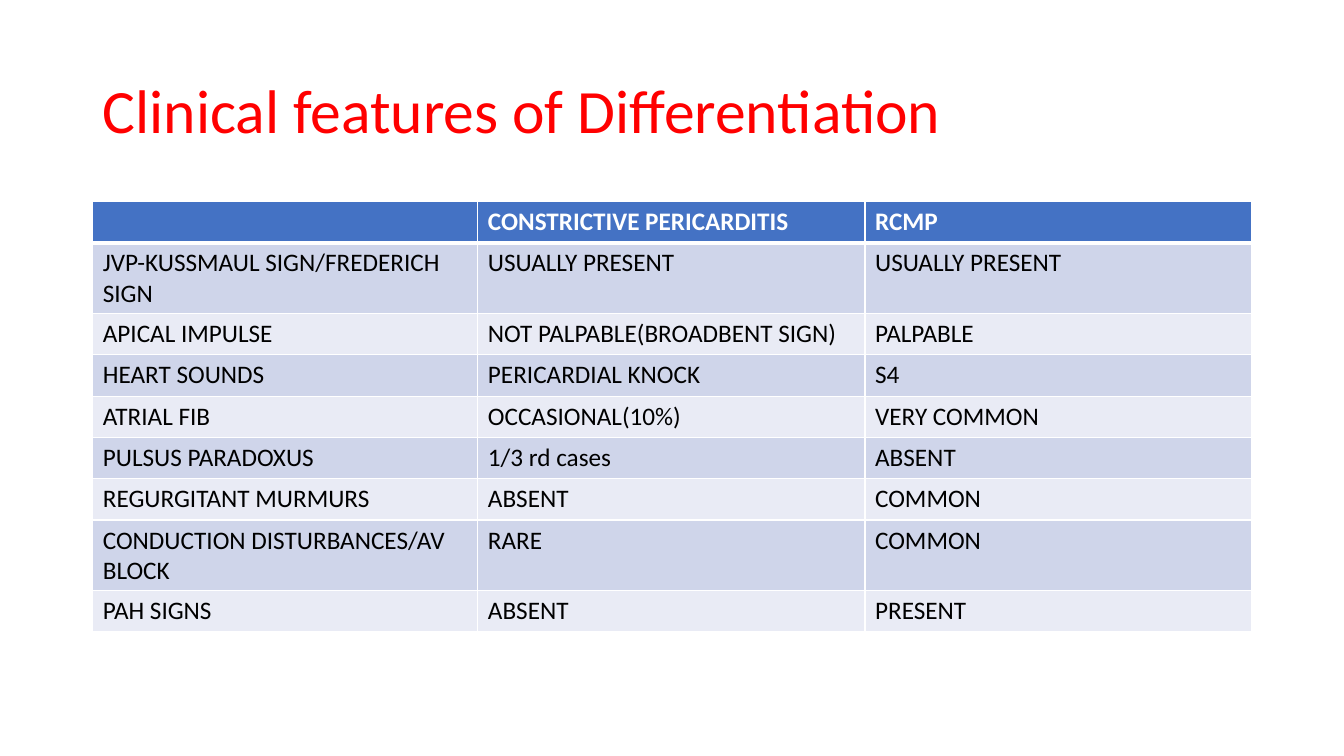
from lxml.etree import SubElement
from pptx import Presentation
from pptx.dml.color import RGBColor
from pptx.enum.text import MSO_ANCHOR as Anchor
from pptx.oxml.ns import qn
from pptx.util import Inches, Pt

FEATURES = [
    ("", "CONSTRICTIVE PERICARDITIS", "RCMP"),
    ("JVP-KUSSMAUL SIGN/FREDERICH SIGN", "USUALLY PRESENT", "USUALLY PRESENT"),
    ("APICAL IMPULSE", "NOT PALPABLE(BROADBENT SIGN)", "PALPABLE"),
    ("HEART SOUNDS", "PERICARDIAL KNOCK", "S4"),
    ("ATRIAL FIB", "OCCASIONAL(10%)", "VERY COMMON"),
    ("PULSUS PARADOXUS", "1/3 rd cases", "ABSENT"),
    ("REGURGITANT MURMURS", "ABSENT", "COMMON"),
    ("CONDUCTION DISTURBANCES/AV BLOCK", "RARE", "COMMON"),
    ("PAH SIGNS", "ABSENT", "PRESENT"),
]


def rgb(hex_code):
    return RGBColor.from_string(hex_code)


class SlideBuilder:
    font = "Calibri"
    white, black, red = "FFFFFF", "000000", "FF0000"
    header_fill = "4472C4"
    band_fills = ("E9EBF5", "CFD5EA")

    def __init__(self, slide):
        self.slide = slide

    def add_run(self, paragraph, text, size, color, bold=False):
        run = paragraph.add_run()
        run.text = text
        run.font.name = self.font
        run.font.size = Pt(size)
        run.font.bold = bold
        run.font.color.rgb = rgb(color)

    def add_title(self, text, left, top, width, height):
        box = self.slide.shapes.add_textbox(
            Inches(left), Inches(top), Inches(width), Inches(height))
        frame = box.text_frame
        frame.word_wrap = True
        frame.vertical_anchor = Anchor.MIDDLE
        heading = frame.paragraphs[0]
        heading.line_spacing = 0.9
        self.add_run(heading, text, 44, self.red)

    def add_borders(self, cell, widths):
        """Draw white cell borders; widths maps each side to points."""
        properties = cell._tc.get_or_add_tcPr()
        for position, (side, points) in enumerate(widths.items()):
            line = SubElement(properties, qn(f"a:ln{side}"), w=str(Pt(points)))
            fill = SubElement(line, qn("a:solidFill"))
            SubElement(fill, qn("a:srgbClr"), val=self.white)
            properties.insert(position, line)

    def add_table(self, rows, left, top, column_widths, row_height):
        table = self.slide.shapes.add_table(
            len(rows), len(column_widths), Inches(left), Inches(top),
            Inches(sum(column_widths)), Inches(row_height * len(rows))).table
        for column, width in zip(table.columns, column_widths):
            column.width = Inches(width)
        for row_index, texts in enumerate(rows):
            table.rows[row_index].height = Inches(row_height)
            is_header = row_index == 0
            fill = self.header_fill if is_header else self.band_fills[row_index % 2]
            color = self.white if is_header else self.black
            borders = {"L": 1, "R": 1, "T": 3 if row_index == 1 else 1,
                       "B": 3 if is_header else 1}
            for column_index, text in enumerate(texts):
                cell = table.cell(row_index, column_index)
                cell.fill.solid()
                cell.fill.fore_color.rgb = rgb(fill)
                self.add_borders(cell, borders)
                if text:
                    self.add_run(cell.text_frame.paragraphs[0], text, 18,
                                 color, is_header)


def main():
    deck = Presentation()
    deck.slide_width, deck.slide_height = Inches(13.33), Inches(7.5)
    builder = SlideBuilder(deck.slides.add_slide(deck.slide_layouts[6]))
    builder.add_title("Clinical features of Differentiation", 0.92, 0.4, 11.5, 1.45)
    builder.add_table(FEATURES, 0.92, 2, (3.82, 3.84, 3.83), 0.41)
    deck.save("out.pptx")


if __name__ == "__main__":
    main()
